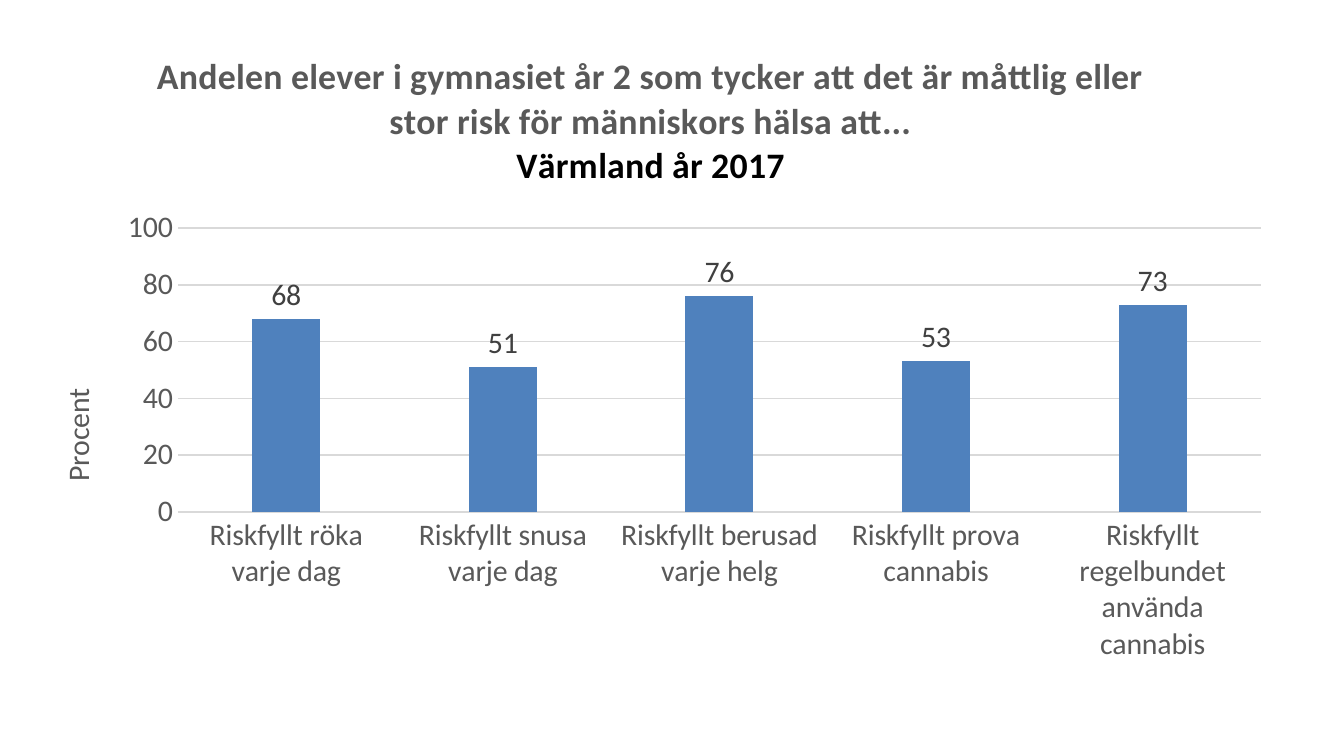
from lxml import etree
from pptx import Presentation
from pptx import util as u
from pptx.chart.data import CategoryChartData
from pptx.dml.color import RGBColor
from pptx.enum import chart as c
from pptx.oxml import parse_xml
from pptx.oxml.ns import nsdecls, qn

BLACK = RGBColor(0x00, 0x00, 0x00)
DARK = RGBColor(0x40, 0x40, 0x40)
GREY = RGBColor(0x59, 0x59, 0x59)
LIGHT = RGBColor(0xD9, 0xD9, 0xD9)
BLUE = RGBColor(0x4F, 0x81, 0xBD)
FONT = "Calibri"

TITLE = [
    ("Andelen elever i gymnasiet år 2 som tycker att det är måttlig eller "
     "stor risk för människors hälsa att...", GREY),
    ("Värmland år 2017", BLACK),
]
AXIS_TITLE = [("Procent", GREY)]
RISKS = {
    "Riskfyllt röka varje dag": 68,
    "Riskfyllt snusa varje dag": 51,
    "Riskfyllt berusad varje helg": 76,
    "Riskfyllt prova cannabis": 53,
    "Riskfyllt regelbundet använda cannabis": 73,
}
CHART_BOX = (0.2, 0.21, 9.37, 4.8)
TITLE_SPOT = {"x": 0.1, "y": 0.03}
AXIS_TITLE_SPOT = {"x": 0.02, "y": 0.55}
PLOT_SPOT = {"x": 0.12, "y": 0.31, "w": 0.86, "h": 0.44}


def format_font(font, size, color, bold=False):
    values = {"name": FONT, "size": u.Pt(size), "bold": bold}
    for name, value in values.items():
        setattr(font, name, value)
    font.color.rgb = color


def write_title(title, lines, size, bold):
    frame = title.text_frame
    for index, (line, color) in enumerate(lines):
        paragraph = frame.add_paragraph() if index else frame.paragraphs[0]
        run = paragraph.add_run()
        run.text = line
        format_font(paragraph.font, size, color, bold)
        format_font(run.font, size, color, bold)


def place(element, spot, inner=False):
    for old in element.findall(qn("c:layout")):
        element.remove(old)
    layout = parse_xml(f"<c:layout {nsdecls('c')}><c:manualLayout/></c:layout>")
    manual = layout[0]
    values = {"layoutTarget": "inner"} if inner else {}
    values.update(xMode="edge", yMode="edge", **spot)
    for name, value in values.items():
        etree.SubElement(manual, qn(f"c:{name}")).set("val", str(value))
    text = element.find(qn("c:tx"))
    element.insert(0 if text is None else 1, layout)


def format_line(line):
    line.color.rgb = LIGHT
    line.width = u.Pt(0.75)


def format_axes(chart):
    for axis in (chart.category_axis, chart.value_axis):
        axis.major_tick_mark = axis.minor_tick_mark = c.XL_TICK_MARK.NONE
        format_font(axis.tick_labels.font, 16, GREY)
    format_line(chart.category_axis.format.line)
    value_axis = chart.value_axis
    scale = {"minimum_scale": 0, "maximum_scale": 100, "major_unit": 20}
    for name, value in scale.items():
        setattr(value_axis, name, value)
    value_axis.format.line.fill.background()
    format_line(value_axis.major_gridlines.format.line)
    write_title(value_axis.axis_title, AXIS_TITLE, 16, False)
    body = value_axis.axis_title.text_frame._txBody.bodyPr
    body.set("rot", "-5400000")
    body.set("vert", "horz")
    place(value_axis.axis_title._element, AXIS_TITLE_SPOT)


def format_columns(plot):
    for name, value in {"gap_width": 219, "overlap": -27, "vary_by_categories": False}.items():
        setattr(plot, name, value)
    series = plot.series[0]
    series.format.fill.solid()
    series.format.fill.fore_color.rgb = BLUE
    labels = series.data_labels
    labels.show_value = True
    labels.position = c.XL_LABEL_POSITION.OUTSIDE_END
    format_font(labels.font, 16, DARK)


def main():
    """Build a slide with a column chart of perceived health risks."""
    presentation = Presentation()
    presentation.slide_width = u.Inches(10)
    presentation.slide_height = presentation.slide_width * 9 // 16
    slide = presentation.slides.add_slide(presentation.slide_layouts[6])
    data = CategoryChartData()
    data.categories = list(RISKS)
    data.add_series("Series 1", list(RISKS.values()))
    chart = slide.shapes.add_chart(
        c.XL_CHART_TYPE.COLUMN_CLUSTERED, *map(u.Inches, CHART_BOX), data).chart
    format_font(chart.font, 16, BLACK)
    chart.has_legend = False
    write_title(chart.chart_title, TITLE, 19.2, True)
    place(chart.chart_title._element, TITLE_SPOT)
    format_axes(chart)
    format_columns(chart.plots[0])
    place(chart._chartSpace.chart.plotArea, PLOT_SPOT, inner=True)
    presentation.save("out.pptx")


if __name__ == "__main__":
    main()
